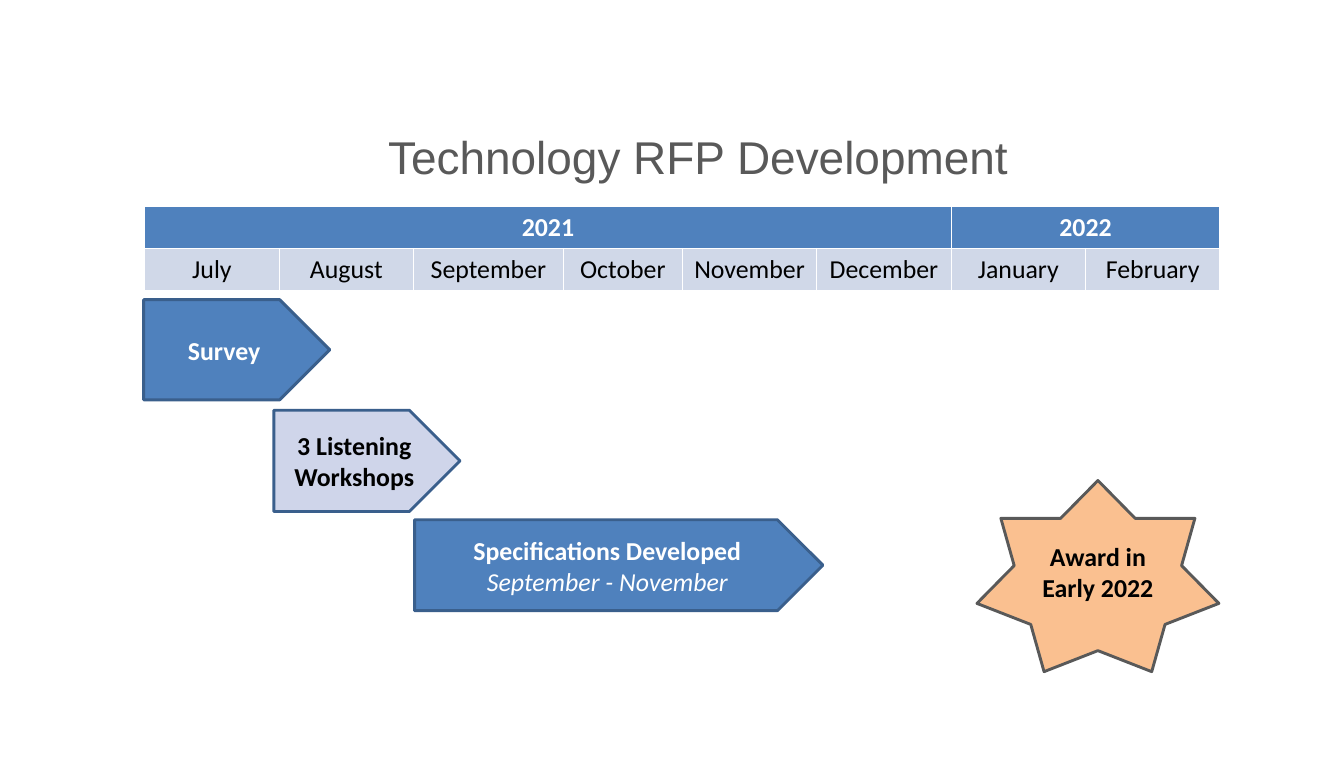
import pptx
import pptx.util
import pptx.dml.color
import pptx.enum.shapes
import pptx.enum.text

Inches = pptx.util.Inches
Pt = pptx.util.Pt
SHAPE = pptx.enum.shapes.MSO_SHAPE
MIDDLE = pptx.enum.text.MSO_ANCHOR.MIDDLE

BLUE, NAVY, WHITE, BLACK, GRAY = "4F81BD", "3A5F8C", "FFFFFF", "000000", "595959"
YEARS = [("2021", 0, 5), ("2022", 6, 7)]
MONTHS = [("July", 1.3), ("August", 1.3), ("September", 1.45), ("October", 1.15),
          ("November", 1.3), ("December", 1.3), ("January", 1.3), ("February", 1.3)]


def rgb(value):
    return pptx.dml.color.RGBColor.from_string(value)


def format_paragraph(p, color, size=18, name="Calibri", bold=False, italic=False):
    p.alignment = pptx.enum.text.PP_ALIGN.CENTER
    p.font.size = Pt(size)
    p.font.name = name
    p.font.bold = bold
    p.font.italic = italic
    p.font.color.rgb = rgb(color)


def place_title(s, text):
    sp = s.shapes.title
    sp.left, sp.top, sp.width, sp.height = map(Inches, (1.4, 1.13, 10.71, 0.77))
    tf = sp.text_frame
    tf.text = text
    tf.vertical_anchor = MIDDLE
    format_paragraph(tf.paragraphs[0], GRAY, 32, "Arial")


def fill_cell(cell, text, fill, color, bold):
    cell.fill.solid()
    cell.fill.fore_color.rgb = rgb(fill)
    cell.text = text
    format_paragraph(cell.text_frame.paragraphs[0], color, bold=bold)


def add_calendar(s):
    width = sum(w for _, w in MONTHS)
    table = s.shapes.add_table(2, len(MONTHS), Inches(1.4), Inches(2),
                               Inches(width), Inches(0.8)).table
    for year, first, last in YEARS:
        table.cell(0, first).merge(table.cell(0, last))
        fill_cell(table.cell(0, first), year, BLUE, WHITE, True)
    for i, (month, w) in enumerate(MONTHS):
        table.columns[i].width = Inches(w)
        fill_cell(table.cell(1, i), month, "D0D8E8", BLACK, False)


def add_milestone(s, kind, box, fill, line, color, text, dates=None):
    sp = s.shapes.add_shape(kind, *map(Inches, box))
    sp.shadow.inherit = False
    sp.fill.solid()
    sp.fill.fore_color.rgb = rgb(fill)
    sp.line.color.rgb = rgb(line)
    sp.line.width = Pt(2)
    tf = sp.text_frame
    tf.word_wrap = True
    tf.vertical_anchor = MIDDLE
    tf.text = text
    format_paragraph(tf.paragraphs[0], color, bold=True)
    if dates:
        p = tf.add_paragraph()
        p.text = dates
        format_paragraph(p, color, italic=True)


def main():
    prs = pptx.Presentation()
    prs.slide_width, prs.slide_height = Inches(13), Inches(7.5)
    s = prs.slides.add_slide(prs.slide_layouts[5])
    place_title(s, "Technology RFP Development")
    add_calendar(s)
    add_milestone(s, SHAPE.PENTAGON, (1.39, 2.9, 1.8, 0.97), BLUE, NAVY, WHITE, "Survey")
    add_milestone(s, SHAPE.PENTAGON, (2.65, 3.97, 1.8, 0.98), "CFD5EA", NAVY, BLACK,
                  "3 Listening Workshops")
    add_milestone(s, SHAPE.PENTAGON, (4.01, 5.03, 3.95, 0.88), BLUE, NAVY, WHITE,
                  "Specifications Developed", "September - November")
    add_milestone(s, SHAPE.STAR_7_POINT, (9.45, 4.65, 2.34, 1.85), "FAC090", GRAY, BLACK,
                  "Award in Early 2022")
    prs.save("out.pptx")


if __name__ == "__main__":
    main()
